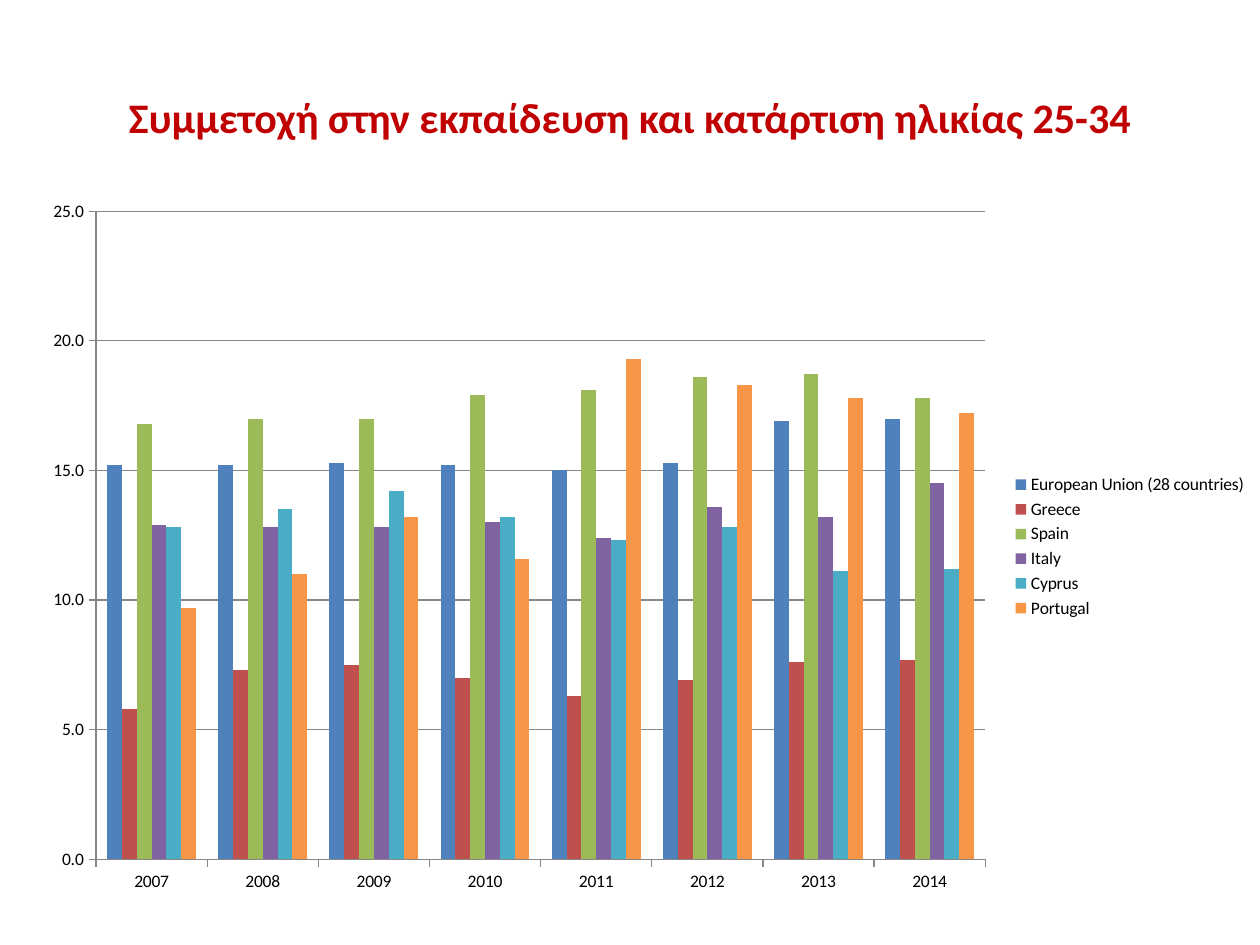
"""Build the slide on participation in education and training, ages 25-34."""
from dataclasses import dataclass

from pptx import Presentation
from pptx.chart.chart import Chart
from pptx.chart.data import CategoryChartData
from pptx.dml.color import RGBColor
from pptx.enum.chart import XL_CHART_TYPE, XL_LEGEND_POSITION, XL_TICK_MARK
from pptx.enum.text import MSO_ANCHOR, PP_ALIGN
from pptx.slide import Slide
from pptx.util import Cm, Pt

RED = RGBColor(0xC0, 0x00, 0x00)
BLACK = RGBColor(0x00, 0x00, 0x00)
GREY = RGBColor(0x86, 0x86, 0x86)
FONT = "Calibri"
TITLE_FORMAT = {"name": FONT, "size": Pt(24), "bold": True}
CHART_FORMAT = {"name": FONT, "size": Pt(10), "bold": False}


@dataclass(frozen=True)
class Country:
    name: str
    color: RGBColor
    rates: tuple[float, ...]


YEARS = [str(year) for year in range(2007, 2015)]
COUNTRIES = [
    Country("European Union (28 countries)", RGBColor(0x4F, 0x81, 0xBD),
            (15.2, 15.2, 15.3, 15.2, 15, 15.3, 16.9, 17)),
    Country("Greece", RGBColor(0xC0, 0x50, 0x4D),
            (5.8, 7.3, 7.5, 7, 6.3, 6.9, 7.6, 7.7)),
    Country("Spain", RGBColor(0x9B, 0xBB, 0x59),
            (16.8, 17, 17, 17.9, 18.1, 18.6, 18.7, 17.8)),
    Country("Italy", RGBColor(0x80, 0x64, 0xA2),
            (12.9, 12.8, 12.8, 13, 12.4, 13.6, 13.2, 14.5)),
    Country("Cyprus", RGBColor(0x4B, 0xAC, 0xC6),
            (12.8, 13.5, 14.2, 13.2, 12.3, 12.8, 11.1, 11.2)),
    Country("Portugal", RGBColor(0xF7, 0x96, 0x46),
            (9.7, 11, 13.2, 11.6, 19.3, 18.3, 17.8, 17.2)),
]


def set_font(font, values: dict, color: RGBColor) -> None:
    for name, value in values.items():
        setattr(font, name, value)
    font.color.rgb = color


def add_title(s: Slide, text: str) -> None:
    sp = s.shapes.title
    sp.left, sp.top, sp.width, sp.height = Cm(1.27), Cm(0.76), Cm(22.86), Cm(3.18)
    tf = sp.text_frame
    tf.vertical_anchor = MSO_ANCHOR.MIDDLE
    p = tf.paragraphs[0]
    p.alignment = PP_ALIGN.CENTER
    r = p.add_run()
    r.text = text
    set_font(r.font, TITLE_FORMAT, RED)


def format_axes(chart: Chart) -> None:
    for axis in (chart.category_axis, chart.value_axis):
        axis.major_tick_mark = XL_TICK_MARK.OUTSIDE
        axis.minor_tick_mark = XL_TICK_MARK.NONE
        axis.format.line.color.rgb = GREY
    axis = chart.value_axis
    axis.minimum_scale, axis.maximum_scale, axis.major_unit = 0, 25, 5
    axis.has_major_gridlines = True
    axis.major_gridlines.format.line.color.rgb = GREY
    axis.tick_labels.number_format = "#,##0.0"
    axis.tick_labels.number_format_is_linked = False


def add_rates_chart(s: Slide, countries: list[Country]) -> None:
    data = CategoryChartData(number_format="#,##0.0")
    data.categories = YEARS
    for country in countries:
        data.add_series(country.name, country.rates)
    chart = s.shapes.add_chart(XL_CHART_TYPE.COLUMN_CLUSTERED, Cm(0.58), Cm(3.77),
                               Cm(24.82), Cm(14.49), data).chart
    set_font(chart.font, CHART_FORMAT, BLACK)
    chart.has_title = False
    chart.has_legend = True
    chart.legend.position = XL_LEGEND_POSITION.RIGHT
    chart.legend.include_in_layout = False
    plot = chart.plots[0]
    plot.vary_by_categories = False
    plot.gap_width, plot.overlap = 150, 0
    for series, country in zip(plot.series, countries):
        series.format.fill.solid()
        series.format.fill.fore_color.rgb = country.color
    format_axes(chart)


def main() -> None:
    prs = Presentation()
    prs.slide_width, prs.slide_height = Cm(25.4), Cm(19.05)
    s = prs.slides.add_slide(prs.slide_layouts[5])
    add_title(s, "Συμμετοχή στην εκπαίδευση και κατάρτιση ηλικίας 25-34")
    add_rates_chart(s, COUNTRIES)
    prs.save("out.pptx")


if __name__ == "__main__":
    main()
